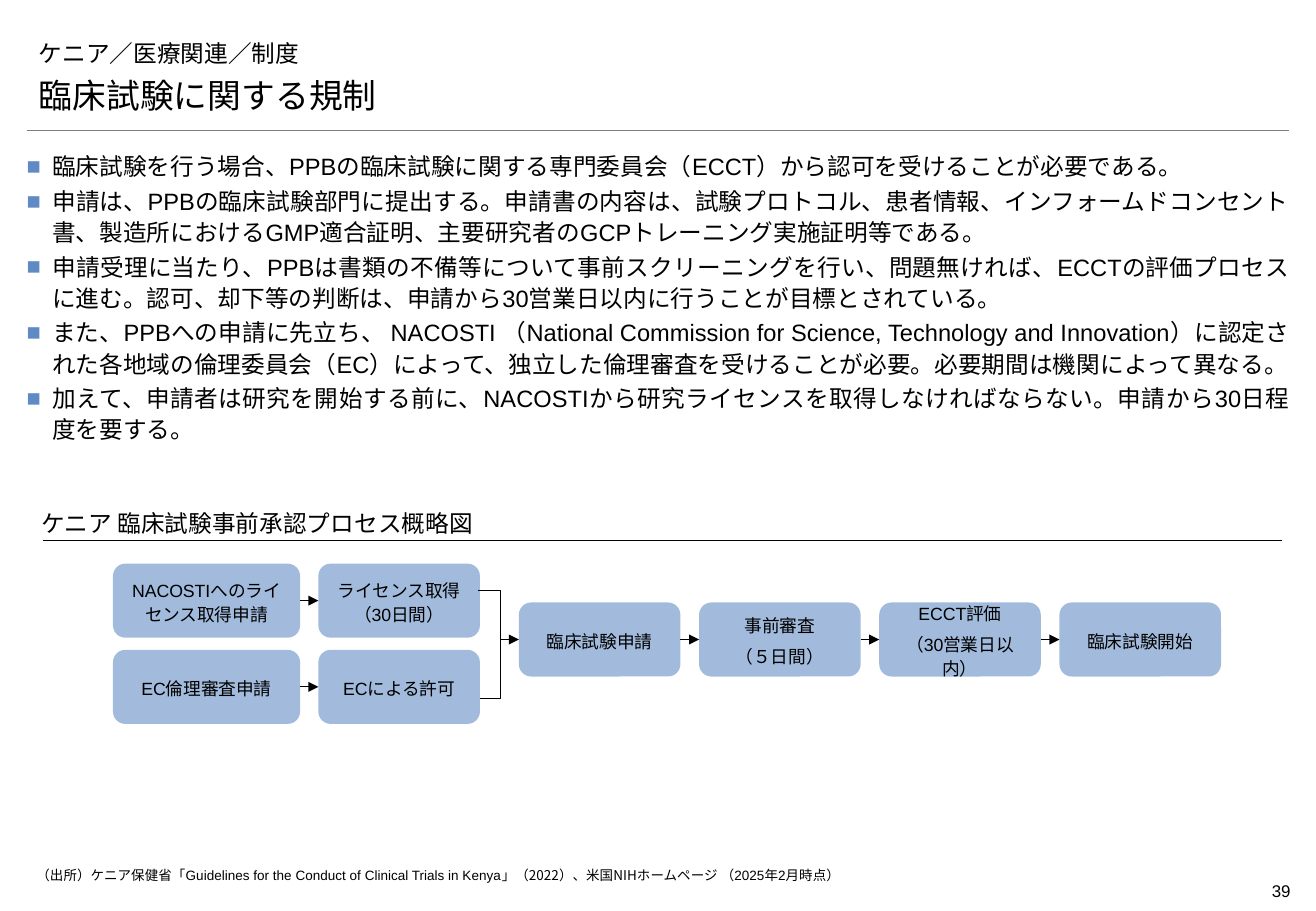
import pptx
import pptx.util
import pptx.dml.color
import pptx.enum.shapes
import pptx.enum.text
import pptx.oxml
import pptx.oxml.ns

Inches = pptx.util.Inches
Pt = pptx.util.Pt
RGBColor = pptx.dml.color.RGBColor
Align = pptx.enum.text.PP_ALIGN
Anchor = pptx.enum.text.MSO_ANCHOR

BLACK = RGBColor(0x00, 0x00, 0x00)
RULE_GRAY = RGBColor(0x7F, 0x7F, 0x7F)
STEP_BLUE = RGBColor(0xA2, 0xBB, 0xDC)
BULLET_BLUE = RGBColor(0x5F, 0x8A, 0xC3)
CJK_FONT = "Noto Sans CJK JP"

STEP_HEIGHT = 0.61
STEP_WIDTH = 1.33
STEP_PITCH = 1.483
MAIN_LEFT = 4.27
MAIN_TOP = 4.96

POINTS = [
    "臨床試験を行う場合、PPBの臨床試験に関する専門委員会（ECCT）から認可を受けることが必要である。",
    "申請は、PPBの臨床試験部門に提出する。申請書の内容は、試験プロトコル、患者情報、インフォームドコンセント書、製造所におけるGMP適合証明、主要研究者のGCPトレーニング実施証明等である。",
    "申請受理に当たり、PPBは書類の不備等について事前スクリーニングを行い、問題無ければ、ECCTの評価プロセスに進む。認可、却下等の判断は、申請から30営業日以内に行うことが目標とされている。",
    "また、PPBへの申請に先立ち、 NACOSTI （National Commission for Science, Technology and Innovation）に認定された各地域の倫理委員会（EC）によって、独立した倫理審査を受けることが必要。必要期間は機関によって異なる。",
    "加えて、申請者は研究を開始する前に、NACOSTIから研究ライセンスを取得しなければならない。申請から30日程度を要する。",
]
PREPARATIONS = [
    (4.64, "NACOSTIへのライセンス取得申請", "ライセンス取得（30日間）"),
    (5.35, "EC倫理審査申請", "ECによる許可"),
]
MAIN_STEPS = ["臨床試験申請", "事前審査\n（５日間）", "ECCT評価\n（30営業日以内）", "臨床試験開始"]
SOURCE = [
    ("（出所）ケニア保健省「", CJK_FONT),
    ("Guidelines for the Conduct of Clinical Trials in Kenya", "Arial"),
    ("」（2022）、米国NIHホームページ ", CJK_FONT),
    ("（2025年2月時点）", "Arial"),
]


def format_run(run, size, font):
    run.font.size = Pt(size)
    run.font.name = font
    run.font.color.rgb = BLACK
    east_asian = pptx.oxml.parse_xml(
        f'<a:ea {pptx.oxml.ns.nsdecls("a")} typeface="{CJK_FONT}"/>')
    run.font._element.find(pptx.oxml.ns.qn("a:latin")).addnext(east_asian)


def set_hanging_indent(paragraph, indent):
    properties = paragraph._p.get_or_add_pPr()
    properties.set("marL", str(Inches(indent)))
    properties.set("indent", str(-Inches(indent)))
    return properties


def add_text(slide, box, text, size, font, anchor=Anchor.TOP, align=Align.LEFT,
             insets=(0.1, 0.05, 0.1, 0.05)):
    frame = slide.shapes.add_textbox(*map(Inches, box)).text_frame
    frame.word_wrap = True
    frame.vertical_anchor = anchor
    (frame.margin_left, frame.margin_top,
     frame.margin_right, frame.margin_bottom) = map(Inches, insets)
    frame.text = text
    for paragraph in frame.paragraphs:
        paragraph.alignment = align
        for run in paragraph.runs:
            format_run(run, size, font)
    return frame


def add_points(slide):
    frame = add_text(slide, (0.22, 1.23, 10.39, 2.42), "\n".join(POINTS), 14, "Arial",
                     align=Align.JUSTIFY, insets=(0, 0, 0, 0))
    namespace = pptx.oxml.ns.nsdecls("a")
    for paragraph in frame.paragraphs:
        properties = set_hanging_indent(paragraph, 0.21)
        for bullet in (f'<a:buClr {namespace}><a:srgbClr val="{BULLET_BLUE}"/></a:buClr>',
                       f'<a:buFont {namespace} typeface="Arial"/>',
                       f'<a:buChar {namespace} char="■"/>'):
            properties.append(pptx.oxml.parse_xml(bullet))
        paragraph.line_spacing = 1.1
        paragraph.space_after = Pt(2)


def add_source(slide):
    frame = add_text(slide, (0.3, 7.14, 9.45, 0.16), "", 8, CJK_FONT, insets=(0, 0, 0, 0))
    paragraph = frame.paragraphs[0]
    set_hanging_indent(paragraph, 0.49)
    for text, font in SOURCE:
        run = paragraph.add_run()
        run.text = text
        format_run(run, 8, font)


def add_line(slide, start, end, color=BLACK, width=0.75):
    line = slide.shapes.add_connector(
        pptx.enum.shapes.MSO_CONNECTOR.STRAIGHT, *map(Inches, start + end))
    line.line.color.rgb = color
    line.line.width = Pt(width)
    line._element.spPr.append(
        pptx.oxml.parse_xml(f'<a:effectLst {pptx.oxml.ns.nsdecls("a")}/>'))
    return line


def add_arrow(slide, start, target, source_step=None):
    arrow = add_line(slide, start, start)
    if source_step is not None:
        arrow.begin_connect(source_step, 3)
    arrow.end_connect(target, 1)
    arrow.line._get_or_add_ln().append(
        pptx.oxml.parse_xml(f'<a:tailEnd {pptx.oxml.ns.nsdecls("a")} type="triangle"/>'))


def add_step(slide, left, top, width, text):
    step = slide.shapes.add_shape(
        pptx.enum.shapes.MSO_SHAPE.ROUNDED_RECTANGLE,
        *map(Inches, (left, top, width, STEP_HEIGHT)))
    step.shadow.inherit = False
    step.fill.solid()
    step.fill.fore_color.rgb = STEP_BLUE
    step.line.fill.background()
    frame = step.text_frame
    frame.word_wrap = True
    frame.vertical_anchor = Anchor.MIDDLE
    frame.text = text
    for paragraph in frame.paragraphs:
        paragraph.alignment = Align.CENTER
        paragraph.line_spacing = 1.14
        paragraph.space_after = Pt(4)
        for run in paragraph.runs:
            format_run(run, 10.5, "Arial")
    return step


def add_merge_bracket(slide):
    builder = slide.shapes.build_freeform(Inches(3.95), Inches(5.75), scale=1.0)
    corners = [(4.12, 5.75), (4.12, 4.86), (3.93, 4.86)]
    builder.add_line_segments([(Inches(x), Inches(y)) for x, y in corners], close=False)
    bracket = builder.convert_to_shape()
    bracket.shadow.inherit = False
    bracket.fill.background()
    bracket.line.color.rgb = BLACK
    bracket.line.width = Pt(0.75)


def add_process(slide):
    for top, application, approval in PREPARATIONS:
        application_step = add_step(slide, 0.93, top, 1.54, application)
        approval_step = add_step(slide, 2.62, top, STEP_WIDTH, approval)
        add_arrow(slide, (2.47, top), approval_step, application_step)
    add_merge_bracket(slide)
    previous = None
    for index, text in enumerate(MAIN_STEPS):
        step = add_step(slide, MAIN_LEFT + index * STEP_PITCH, MAIN_TOP, STEP_WIDTH, text)
        add_arrow(slide, (4.12, MAIN_TOP + STEP_HEIGHT / 2), step, previous)
        previous = step


def main():
    presentation = pptx.Presentation()
    presentation.slide_width = Inches(10.83)
    presentation.slide_height = Inches(7.5)
    slide = presentation.slides.add_slide(presentation.slide_layouts[6])
    add_line(slide, (0.22, 1.07), (10.61, 1.07), RULE_GRAY, 0.25)
    add_text(slide, (9.83, 7.2, 0.79, 0.27), "39", 10, "Arial",
             align=Align.RIGHT, insets=(0, 0.05, 0, 0.05))
    add_text(slide, (0.22, 0.26, 10.39, 0.34), "ケニア／医療関連／制度", 14, "Montserrat",
             Anchor.BOTTOM)
    add_text(slide, (0.22, 0.56, 10.4, 0.44), "臨床試験に関する規制", 20, "Montserrat",
             Anchor.BOTTOM)
    add_points(slide)
    add_line(slide, (0.35, 4.45), (10.55, 4.45))
    add_text(slide, (0.34, 4.19, 8.19, 0.31), "ケニア 臨床試験事前承認プロセス概略図", 14,
             CJK_FONT, Anchor.BOTTOM, insets=(0, 0.05, 0, 0.08))
    add_process(slide)
    add_source(slide)
    presentation.save("out.pptx")


if __name__ == "__main__":
    main()
